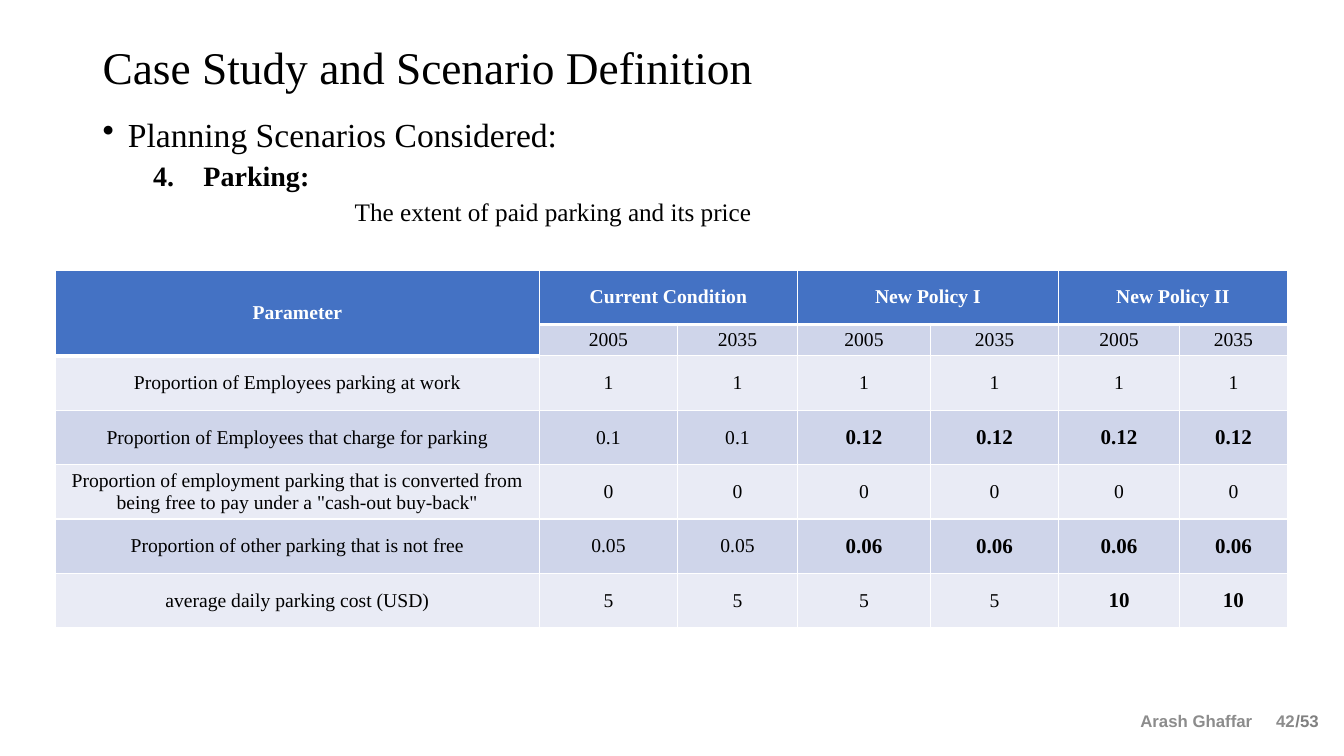
from dataclasses import dataclass

from lxml.etree import SubElement
from pptx import Presentation
from pptx.dml.color import RGBColor
from pptx.enum.text import MSO_ANCHOR as Anchor, PP_ALIGN as Align
from pptx.oxml.ns import qn
from pptx.util import Emu, Pt

EMU_PER_PX = 9144  # 100 px to the inch


@dataclass(frozen=True)
class Theme:
    serif: str = "Times New Roman"
    sans: str = "Arial"
    black: str = "000000"
    white: str = "FFFFFF"
    author: str = "8C8C8C"
    total: str = "808080"
    header: str = "4472C4"
    band_dark: str = "CFD5EA"
    band_light: str = "E9EBF5"
    title: float = 32.4
    heading: int = 24
    subheading: int = 20
    detail: int = 18
    cell: int = 14
    changed: int = 15
    footer: int = 12


THEME = Theme()

COLUMN_WIDTHS = [480, 137, 119, 132, 127, 120, 107]
ROW_HEIGHTS = [54, 31, 54, 54, 54, 54, 54]
CONDITIONS = ["Current Condition", "New Policy I", "New Policy II"]
YEARS = ["2005", "2035"]
PARAMETERS = [
    ("Proportion of Employees parking at work", ["1"] * 6),
    ("Proportion of Employees that charge for parking", ["0.1"] * 2 + ["0.12"] * 4),
    ("Proportion of employment parking that is converted from\n"
     'being free to pay under a "cash-out buy-back"', ["0"] * 6),
    ("Proportion of other parking that is not free", ["0.05"] * 2 + ["0.06"] * 4),
    ("average daily parking cost (USD)", ["5"] * 4 + ["10"] * 2),
]


def px(length):
    return Emu(length * EMU_PER_PX)


def write(paragraph, text, size=THEME.cell, font=THEME.serif, color=THEME.black,
          bold=False, align=Align.LEFT, line_spacing=None, space_before=0):
    paragraph.alignment = align
    paragraph.space_before = Pt(space_before)
    if line_spacing:
        paragraph.line_spacing = line_spacing
    run = paragraph.add_run()
    run.text = text
    run.font.size = Pt(size)
    run.font.name = font
    run.font.bold = bold
    run.font.color.rgb = RGBColor.from_string(color)


def add_text_box(slide, left, top, width, height, anchor=Anchor.TOP, wrap=True):
    frame = slide.shapes.add_textbox(px(left), px(top), px(width), px(height)).text_frame
    frame.word_wrap = wrap
    frame.vertical_anchor = anchor
    return frame


def indent(paragraph, margin, first_line=0, marker=None, **attributes):
    properties = paragraph._p.get_or_add_pPr()
    properties.set("marL", str(px(margin)))
    properties.set("indent", str(px(first_line)))
    if marker:
        SubElement(properties, qn(f"a:{marker}"), attributes)


def set_borders(cell, bottom):
    properties = cell._tc.get_or_add_tcPr()
    # Border lines come before the fill in the cell properties
    for index, (side, points) in enumerate(
            [("lnL", 1), ("lnR", 1), ("lnT", 1), ("lnB", bottom)]):
        line = SubElement(properties, qn(f"a:{side}"), w=str(Pt(points)))
        fill = SubElement(line, qn("a:solidFill"))
        SubElement(fill, qn("a:srgbClr"), val=THEME.white)
        properties.insert(index, line)


def style_cell(cell, fill, bottom=1):
    cell.fill.solid()
    cell.fill.fore_color.rgb = RGBColor.from_string(fill)
    cell.vertical_anchor = Anchor.MIDDLE
    cell.margin_top = cell.margin_bottom = 0
    set_borders(cell, bottom)


def write_cell(cell, text, **text_format):
    frame = cell.text_frame
    for index, line in enumerate(text.split("\n")):
        paragraph = frame.add_paragraph() if index else frame.paragraphs[0]
        write(paragraph, line, align=Align.CENTER, **text_format)


def add_parking_table(slide):
    table = slide.shapes.add_table(
        len(ROW_HEIGHTS), len(COLUMN_WIDTHS), px(55), px(268),
        px(sum(COLUMN_WIDTHS)), px(sum(ROW_HEIGHTS))).table
    for column, width in zip(table.columns, COLUMN_WIDTHS):
        column.width = px(width)
    for row, height in zip(table.rows, ROW_HEIGHTS):
        row.height = px(height)

    # Fills and borders
    for row in range(len(ROW_HEIGHTS)):
        for column in range(len(COLUMN_WIDTHS)):
            is_header = row == 0 or (row == 1 and column == 0)
            band = THEME.band_dark if row % 2 else THEME.band_light
            style_cell(table.cell(row, column), THEME.header if is_header else band,
                       bottom=3 if is_header else 1)

    # Header rows
    table.cell(0, 0).merge(table.cell(1, 0))
    write_cell(table.cell(0, 0), "Parameter", color=THEME.white, bold=True)
    for index, condition in enumerate(CONDITIONS):
        first = 1 + index * len(YEARS)
        table.cell(0, first).merge(table.cell(0, first + 1))
        write_cell(table.cell(0, first), condition, color=THEME.white, bold=True)
        for offset, year in enumerate(YEARS):
            write_cell(table.cell(1, first + offset), year)

    # Values, emphasised where a policy departs from the current condition
    for row, (parameter, values) in enumerate(PARAMETERS, start=2):
        write_cell(table.cell(row, 0), parameter)
        for index, value in enumerate(values):
            changed = value != values[index % len(YEARS)]
            write_cell(table.cell(row, index + 1), value, bold=changed,
                       size=THEME.changed if changed else THEME.cell)


def add_outline(slide):
    frame = add_text_box(slide, 92, 113, 1150, 140)
    heading = frame.paragraphs[0]
    write(heading, "Planning Scenarios Considered:", size=THEME.heading,
          line_spacing=0.9, space_before=10)
    indent(heading, 25, -25, "buChar", char="•")

    scenario = frame.add_paragraph()
    write(scenario, "Parking:", size=THEME.subheading, bold=True,
          line_spacing=0.9, space_before=5)
    indent(scenario, 100, -50, "buAutoNum", type="arabicPeriod", startAt="4")

    detail = frame.add_paragraph()
    write(detail, "The extent of paid parking and its price", size=THEME.detail,
          line_spacing=0.9, space_before=5)
    indent(detail, 250)


def add_footer(slide):
    parts = [
        ("Arash Ghaffar", 994, 258, THEME.author, Align.RIGHT),
        ("42", 1244, 50, THEME.author, Align.RIGHT),
        ("/53", 1275, 44, THEME.total, Align.LEFT),
    ]
    for text, left, width, color, align in parts:
        frame = add_text_box(slide, left, 700, width, 30, Anchor.MIDDLE, wrap=False)
        write(frame.paragraphs[0], text, size=THEME.footer, font=THEME.sans,
              color=color, bold=True, align=align)


def main():
    presentation = Presentation()
    presentation.slide_width = px(1333)
    presentation.slide_height = px(750)
    slide = presentation.slides.add_slide(presentation.slide_layouts[6])

    # Title and outline
    title = add_text_box(slide, 92, 40, 1150, 58, Anchor.MIDDLE)
    write(title.paragraphs[0], "Case Study and Scenario Definition",
          size=THEME.title, line_spacing=0.9)
    add_outline(slide)

    # Table and footer
    add_parking_table(slide)
    add_footer(slide)
    presentation.save("out.pptx")


if __name__ == "__main__":
    main()
